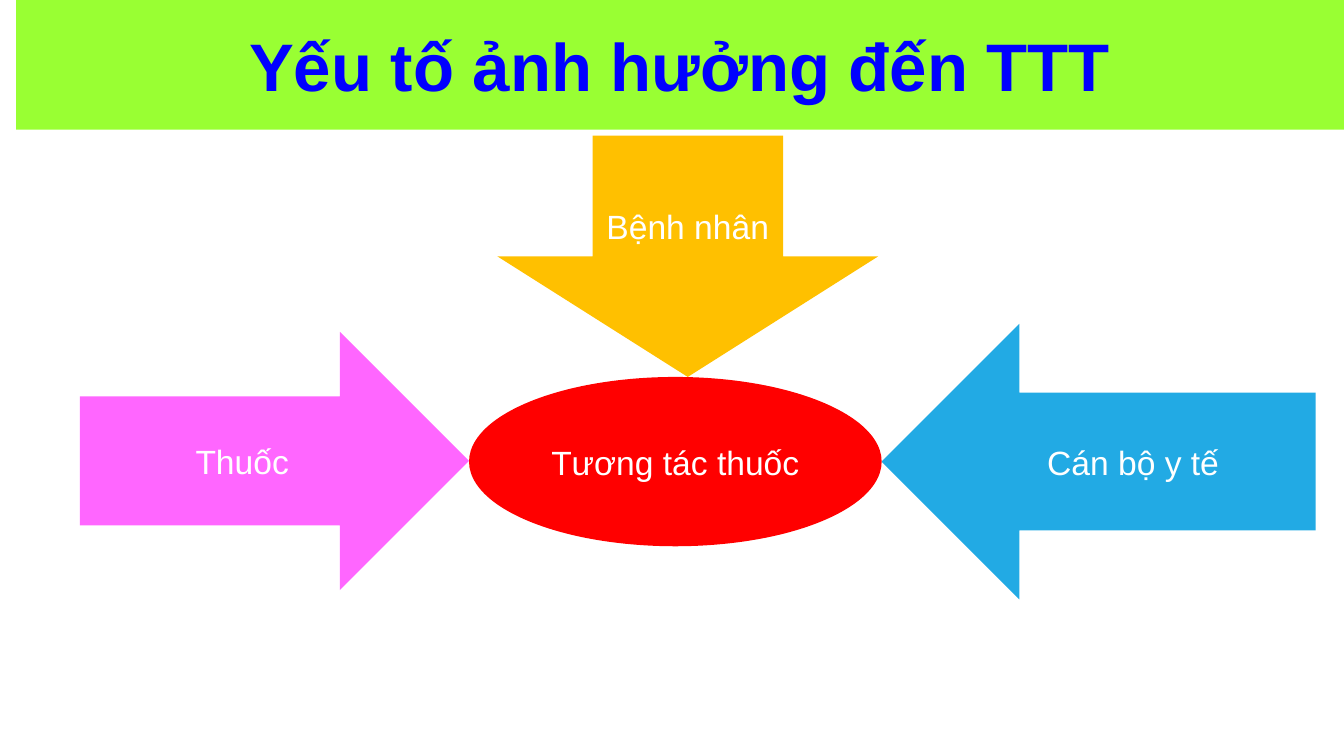
from pptx import Presentation
from pptx.dml.color import RGBColor
from pptx.enum.shapes import MSO_SHAPE
from pptx.enum.text import MSO_ANCHOR, PP_ALIGN
from pptx.util import Pt

PX = 4572
SIZE = (2000, 1125)
HEAD = ("Yếu tố ảnh hưởng đến TTT", (24, 0, 1976, 193), "99FF33")
PARTS = [
    ("Thuốc", MSO_SHAPE.RIGHT_ARROW, (119, 494, 579, 384), "FF66FF"),
    ("Bệnh nhân", MSO_SHAPE.DOWN_ARROW, (740, 202, 567, 359), "FFC000"),
    ("Cán bộ y tế", MSO_SHAPE.LEFT_ARROW, (1312, 482, 646, 410), "22AAE4"),
    ("Tương tác thuốc", MSO_SHAPE.OVAL, (698, 561, 614, 252), "FF0000"),
]


def color(code):
    return RGBColor.from_string(code)


HEAD_FONT = {"name": "Arial", "size": Pt(36), "bold": True}
PART_FONT = {"name": "Arial", "size": Pt(18), "bold": False}
FRAME = {"word_wrap": True, "vertical_anchor": MSO_ANCHOR.MIDDLE,
         "margin_left": 0, "margin_right": 0}


def assign(item, values):
    for key, value in values.items():
        setattr(item, key, value)


def style(shape, text, fill, font, ink):
    shape.fill.solid()
    shape.fill.fore_color.rgb = color(fill)
    shape.line.fill.background()
    frame = shape.text_frame
    assign(frame, FRAME)
    line = frame.paragraphs[0]
    line.alignment = PP_ALIGN.CENTER
    run = line.add_run()
    run.text = text
    assign(run.font, font)
    run.font.color.rgb = color(ink)


deck = Presentation()
deck.slide_width, deck.slide_height = (n * PX for n in SIZE)
slide = deck.slides.add_slide(deck.slide_layouts[5])

text, box, fill = HEAD
title = slide.shapes.title
assign(title, dict(zip(("left", "top", "width", "height"), (n * PX for n in box))))
style(title, text, fill, HEAD_FONT, "0000FF")

for text, kind, box, fill in PARTS:
    shape = slide.shapes.add_shape(kind, *(n * PX for n in box))
    shape.shadow.inherit = False
    style(shape, text, fill, PART_FONT, "FFFFFF")

deck.save("out.pptx")
